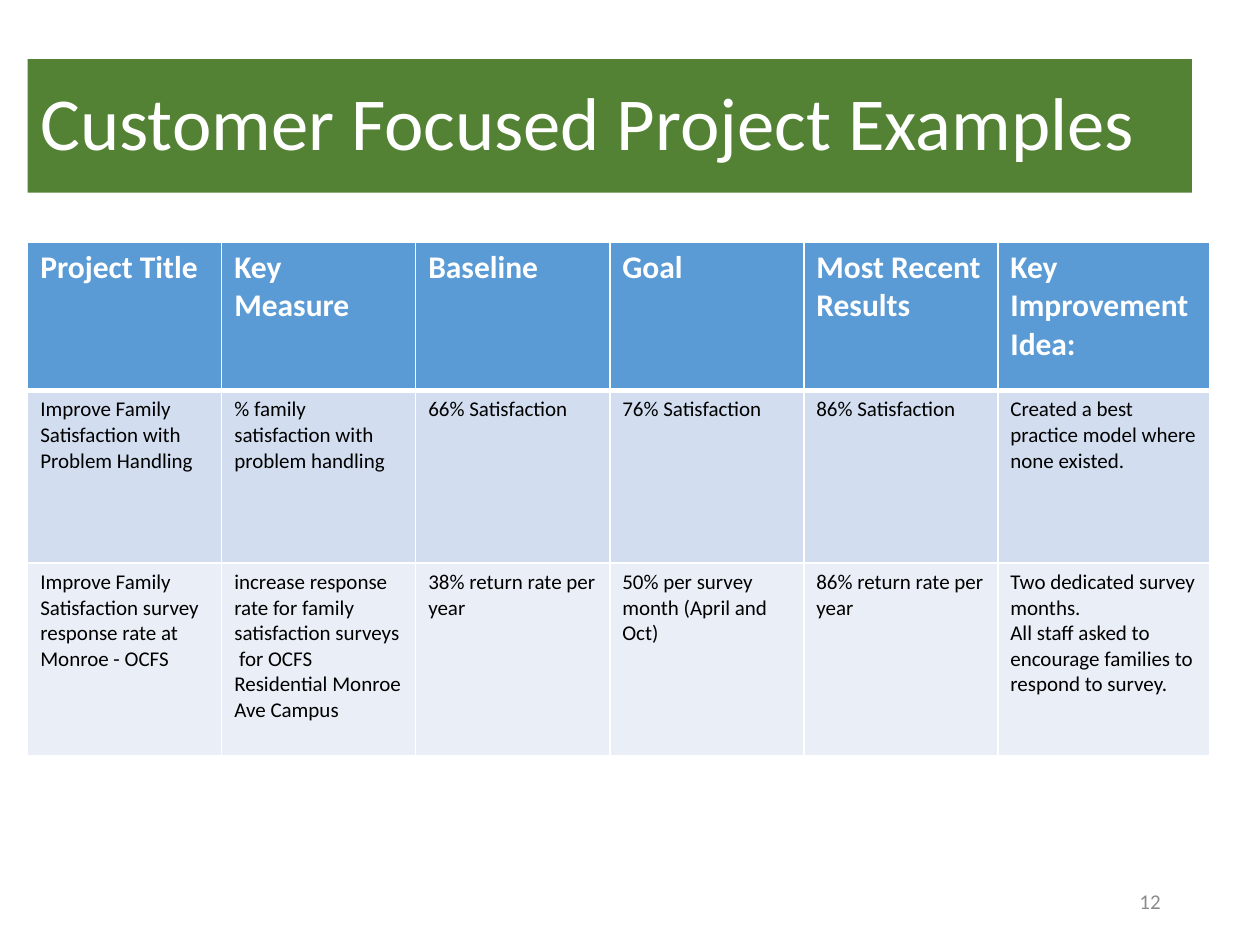
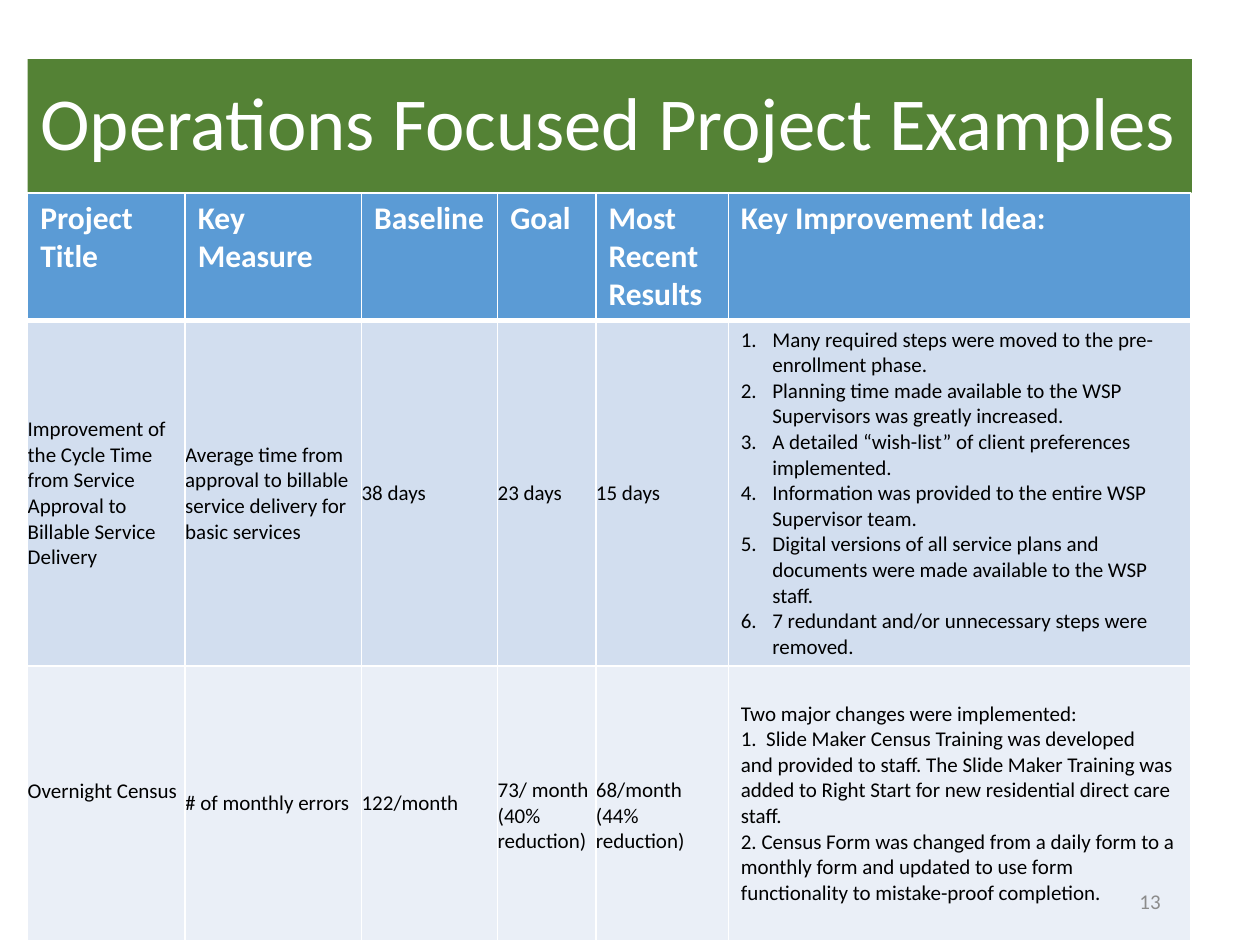
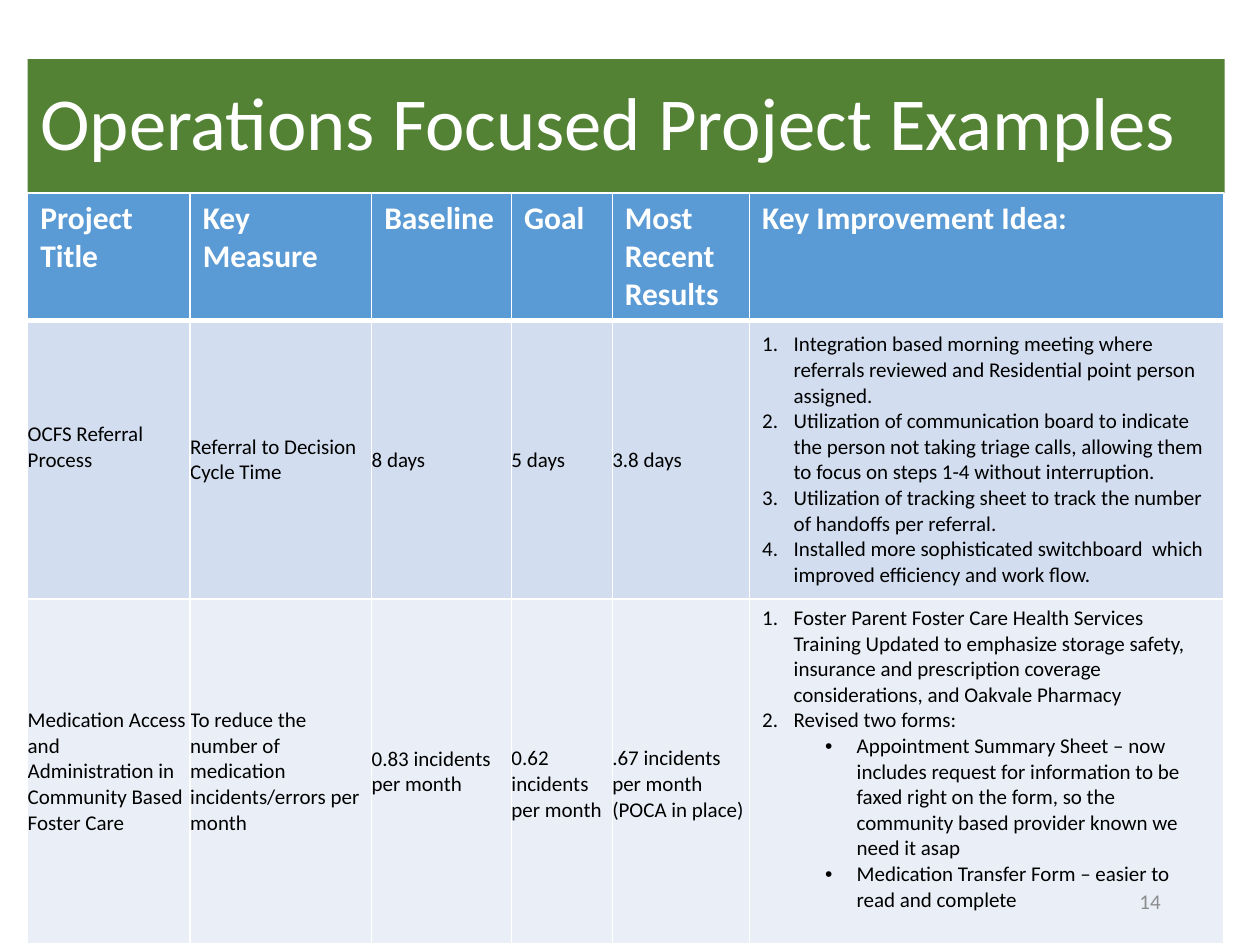
from lxml.etree import SubElement
from pptx import Presentation
from pptx.dml.color import RGBColor
from pptx.enum.text import MSO_ANCHOR as ANCHOR, MSO_AUTO_SIZE as AUTOSIZE, PP_ALIGN as ALIGN
from pptx.oxml.ns import qn
from pptx.util import Inches, Pt

COLORS = {
    "band": "548235", "header": "5B9BD5", "row": "D2DEEF", "alternate": "EAEFF7",
    "white": "FFFFFF", "black": "000000", "number": "8C8C8C",
}
FONT = "Calibri"
LEFT = 0.22
LINE = 0.2
HEADERS = ["Project Title", "Key Measure", "Baseline", "Goal", "Most Recent Results",
           "Key Improvement Idea:"]
ROW_FILLS = ["header", "row", "alternate"]

SLIDES = [
    {
        "title": "Customer Focused Project Examples", "band_width": 9.24, "number": 12,
        "top": 1.92, "columns": [1.54] * 5 + [1.68], "heights": [1.18, 1.37, 1.53],
        "flush": False, "extra_top": [], "extra_bottom": [],
        "projects": [
            ["Improve Family Satisfaction with Problem Handling",
             "% family satisfaction with problem handling",
             "66% Satisfaction", "76% Satisfaction", "86% Satisfaction",
             [("plain", "Created a best practice model where none existed.")]],
            ["Improve Family Satisfaction survey response rate at Monroe - OCFS",
             "increase response rate for family satisfaction surveys  for OCFS "
             "Residential Monroe Ave Campus",
             "38% return rate per year", "50% per survey month (April and Oct)",
             "86% return rate per year",
             [("plain", "Two dedicated survey months."),
              ("plain", "All staff asked to encourage families to respond to survey.")]],
        ],
    },
    {
        "title": "Operations Focused Project Examples", "band_width": 9.24, "number": 13,
        "top": 1.53, "columns": [1.25, 1.4, 1.08, 0.78, 1.05, 3.67],
        "heights": [0.95, 2.56, 2.18],
        "flush": True, "extra_top": [(2, 3), (2, 4)], "extra_bottom": [(2, 0)],
        "projects": [
            ["Improvement of the Cycle Time from Service Approval to Billable Service Delivery",
             "Average time from approval to billable service delivery for basic services",
             "38 days", "23 days", "15 days",
             [("step", "Many required steps were moved to the pre-enrollment phase."),
              ("step", "Planning time made available to the WSP Supervisors was greatly "
                       "increased."),
              ("step", "A detailed “wish-list” of client preferences implemented."),
              ("step", "Information was provided to the entire WSP Supervisor team."),
              ("step", "Digital versions of all service plans and documents were made "
                       "available to the WSP staff."),
              ("step", "7 redundant and/or unnecessary steps were removed.")]],
            ["Overnight Census", "# of monthly errors", "122/month",
             "73/ month (40% reduction)", "68/month (44% reduction)",
             [("plain", "Two major changes were implemented:"),
              ("plain", "1.  Slide Maker Census Training was developed"),
              ("plain", "and provided to staff. The Slide Maker Training was added to Right "
                        "Start for new residential direct care staff."),
              ("plain", "2. Census Form was changed from a daily form to a monthly form and "
                        "updated to use form functionality to mistake-proof completion.")]],
        ],
    },
    {
        "title": "Operations Focused Project Examples", "band_width": 9.5, "number": 14,
        "top": 1.53, "columns": [1.29, 1.44, 1.11, 0.8, 1.09, 3.76],
        "heights": [0.96, 2.21, 2.63],
        "flush": True, "extra_top": [(2, 3), (2, 4)], "extra_bottom": [(1, 0), (2, 5)],
        "projects": [
            ["OCFS Referral Process", "Referral to Decision Cycle Time",
             "8 days", "5 days", "3.8 days",
             [("step", "Integration based morning meeting where referrals reviewed and "
                       "Residential point person assigned."),
              ("step", "Utilization of communication board to indicate the person not taking "
                       "triage calls, allowing them to focus on steps 1-4 without "
                       "interruption."),
              ("step", "Utilization of tracking sheet to track the number of handoffs per "
                       "referral."),
              ("step", "Installed more sophisticated switchboard  which improved efficiency "
                       "and work flow.")]],
            ["Medication Access and Administration in Community Based Foster Care",
             "To reduce the number of medication incidents/errors per month",
             "0.83 incidents per month", "0.62 incidents per month",
             ".67 incidents per month (POCA in place)",
             [("step", "Foster Parent Foster Care Health Services Training Updated to "
                       "emphasize storage safety, insurance and prescription coverage "
                       "considerations, and Oakvale Pharmacy"),
              ("step", "Revised two forms:"),
              ("detail", "Appointment Summary Sheet – now includes request for information to "
                         "be faxed right on the form, so the community based provider known "
                         "we need it asap"),
              ("detail", "Medication Transfer Form – easier to read and complete")]],
        ],
    },
]


def style_paragraph(paragraph, size, color, bold=False, kind="plain"):
    font = paragraph.font
    font.name, font.size, font.bold = FONT, Pt(size), bold
    font.color.rgb = RGBColor.from_string(COLORS[color])
    if kind == "plain":
        return
    properties = paragraph._p.get_or_add_pPr()
    properties.set("marL", str(Inches(0.25 if kind == "step" else 0.75)))
    properties.set("indent", str(Inches(-0.25)))
    if kind == "step":
        SubElement(properties, qn("a:buAutoNum"), type="arabicPeriod")
    else:
        paragraph.level = 1
        SubElement(properties, qn("a:buFont"), typeface="Arial")
        SubElement(properties, qn("a:buChar"), char="•")
    properties.append(properties.find(qn("a:defRPr")))


def style_cell(cell, row):
    properties = cell._tc.get_or_add_tcPr()
    for side in "LRTB":
        thick = (row, side) in [(0, "B"), (1, "T")]
        border = SubElement(properties, qn(f"a:ln{side}"), w=str(Pt(3 if thick else 1)))
        paint = SubElement(border, qn("a:solidFill"))
        SubElement(paint, qn("a:srgbClr"), val=COLORS["white"])
    cell.fill.solid()
    cell.fill.fore_color.rgb = RGBColor.from_string(COLORS[ROW_FILLS[row]])


deck = Presentation()
deck.slide_width, deck.slide_height = Inches(10), Inches(7.5)

for content in SLIDES:
    slide = deck.slides.add_slide(deck.slide_layouts[5])
    title = slide.shapes.title
    title.left, title.top = Inches(LEFT), Inches(0.47)
    title.width, title.height = Inches(content["band_width"]), Inches(1.06)
    title.fill.solid()
    title.fill.fore_color.rgb = RGBColor.from_string(COLORS["band"])
    title.text = content["title"]
    title.text_frame.auto_size = AUTOSIZE.NONE
    title.text_frame.vertical_anchor = ANCHOR.MIDDLE
    heading = title.text_frame.paragraphs[0]
    heading.alignment, heading.line_spacing = ALIGN.LEFT, 0.9
    style_paragraph(heading, 42.7, "white")

    columns, heights = content["columns"], content["heights"]
    projects = slide.shapes.add_table(
        len(heights), len(columns), Inches(LEFT), Inches(content["top"]),
        Inches(sum(columns)), Inches(sum(heights))).table
    for column, width in zip(projects.columns, columns):
        column.width = Inches(width)
    for table_row, height in zip(projects.rows, heights):
        table_row.height = Inches(height)

    for row, values in enumerate([HEADERS] + content["projects"]):
        for col, value in enumerate(values):
            cell = projects.cell(row, col)
            style_cell(cell, row)
            if row and content["flush"]:
                cell.vertical_anchor = ANCHOR.MIDDLE
                if col < 5:
                    cell.margin_left = cell.margin_right = 0
                    cell.margin_top = cell.margin_bottom = 0
            if (row, col) in content["extra_top"]:
                cell.margin_top += Inches(LINE)
            if (row, col) in content["extra_bottom"]:
                cell.margin_bottom += Inches(LINE)
            entries = [("plain", value)] if isinstance(value, str) else value
            cell.text = "\n".join(text for _, text in entries)
            for paragraph, (kind, _) in zip(cell.text_frame.paragraphs, entries):
                if row:
                    style_paragraph(paragraph, 12, "black", kind=kind)
                else:
                    style_paragraph(paragraph, 18, "white", bold=True)

    page = slide.shapes.add_textbox(Inches(7.06), Inches(6.95), Inches(2.25), Inches(0.4))
    page.text_frame.word_wrap = True
    page.text_frame.vertical_anchor = ANCHOR.MIDDLE
    page.text_frame.text = str(content["number"])
    page.text_frame.paragraphs[0].alignment = ALIGN.RIGHT
    style_paragraph(page.text_frame.paragraphs[0], 12, "number")

deck.save("out.pptx")
